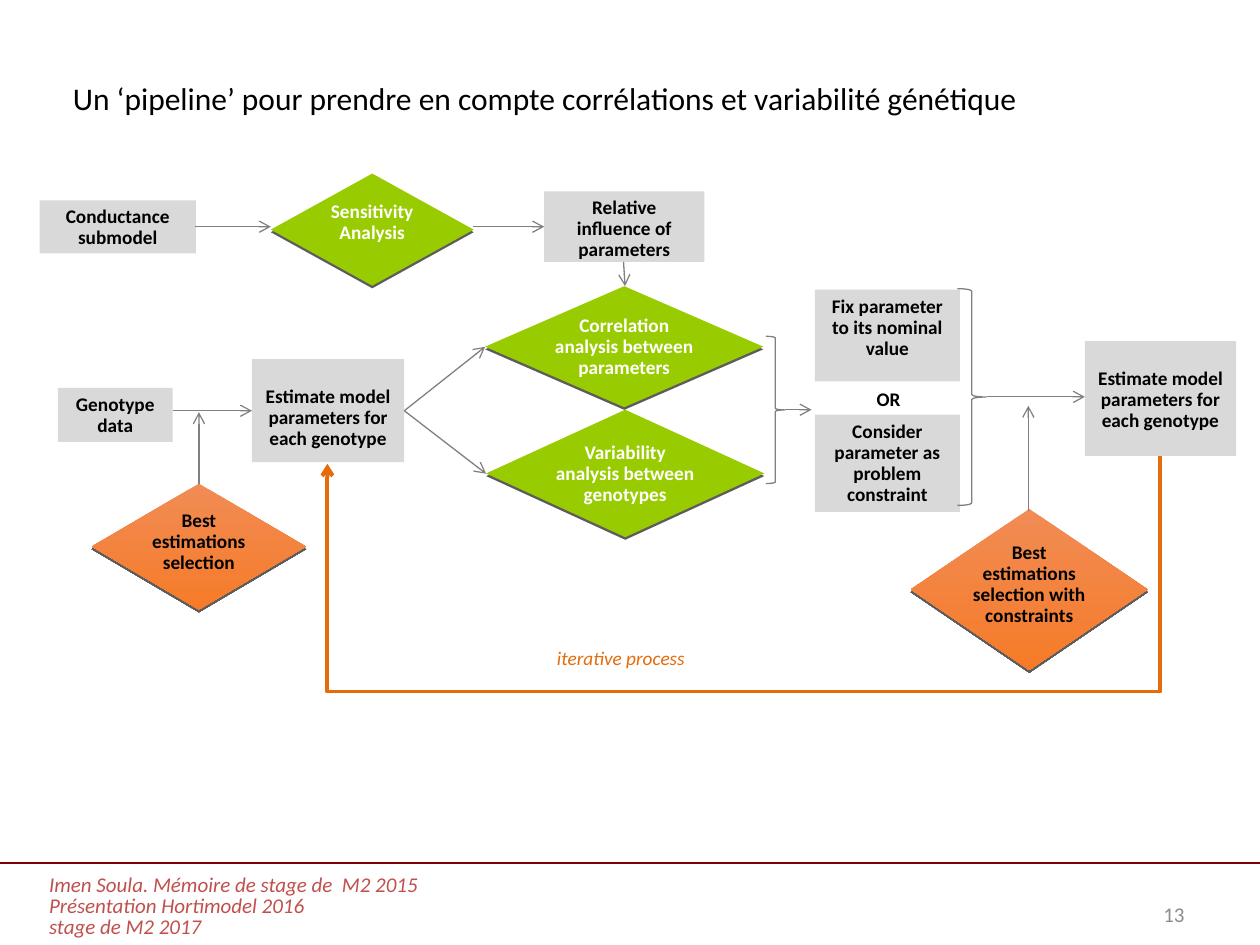
from dataclasses import dataclass

from lxml import etree
from pptx import Presentation
from pptx.dml.color import RGBColor
from pptx.enum.shapes import MSO_CONNECTOR, MSO_SHAPE
from pptx.enum.text import MSO_ANCHOR, PP_ALIGN
from pptx.oxml.ns import qn
from pptx.util import Cm, Pt

RECT = MSO_SHAPE.RECTANGLE
DECISION = MSO_SHAPE.FLOWCHART_DECISION
BRACE = MSO_SHAPE.RIGHT_BRACE
STRAIGHT, ELBOW = MSO_CONNECTOR.STRAIGHT, MSO_CONNECTOR.ELBOW
LEFT, CENTER, RIGHT = PP_ALIGN.LEFT, PP_ALIGN.CENTER, PP_ALIGN.RIGHT
TOP, MIDDLE = MSO_ANCHOR.TOP, MSO_ANCHOR.MIDDLE


@dataclass(frozen=True)
class Theme:
    font: str = "Calibri"
    black: str = "000000"
    white: str = "FFFFFF"
    box: str = "D9D9D9"
    green: str = "99CC00"
    orange: tuple = ("F18C55", "F67B28")
    line: str = "808080"
    loop: str = "E46C0A"
    rule: str = "800000"
    credit: str = "C0504D"
    number: str = "8C8C8C"
    title_size: int = 18
    footer_size: int = 12
    label_size: int = 11
    leading: int = 12


T = Theme()


def rgb(value):
    return RGBColor.from_string(value)


def write(sp, text, size=T.label_size, color=T.black, bold=False, italic=False,
          align=CENTER, anchor=TOP, wrap=True, leading=T.leading,
          margins=(0.25, 0.13, 0.25, 0.13), indent=0):
    """Write one paragraph per line; margins (l, t, r, b) and indent in cm."""
    tf = sp.text_frame
    tf.word_wrap = wrap
    tf.vertical_anchor = anchor
    tf.margin_left, tf.margin_top, tf.margin_right, tf.margin_bottom = map(Cm, margins)
    for i, line in enumerate(text.split("\n")):
        p = tf.add_paragraph() if i else tf.paragraphs[0]
        p.alignment = align
        if leading:
            p.line_spacing = Pt(leading)
        if indent:
            p._p.get_or_add_pPr().set("marL", str(Cm(indent)))
        r = p.add_run()
        r.text = line
        f = r.font
        f.name, f.size, f.bold, f.italic = T.font, Pt(size), bold, italic
        f.color.rgb = rgb(color)


def add_text(slide, x, y, w, h, text, **fmt):
    write(slide.shapes.add_textbox(Cm(x), Cm(y), Cm(w), Cm(h)), text, **fmt)


def add_node(slide, kind, x, y, w, h, fill=None):
    sp = slide.shapes.add_shape(kind, Cm(x), Cm(y), Cm(w), Cm(h))
    sp.shadow.inherit = False
    if fill is None:
        sp.fill.background()
        sp.line.color.rgb = rgb(T.line)
        sp.line.width = Pt(0.75)
        return sp
    sp.line.fill.background()
    if isinstance(fill, tuple):
        sp.fill.gradient()
        sp.fill.gradient_angle = 270
        for stop, color, pos in zip(sp.fill.gradient_stops, fill, (0, 1)):
            stop.color.rgb = rgb(color)
            stop.position = pos
    else:
        sp.fill.solid()
        sp.fill.fore_color.rgb = rgb(fill)
    return sp


def drop_shadow(sp):
    effects = sp._element.spPr.find(qn("a:effectLst"))
    shadow = etree.SubElement(effects, qn("a:outerShdw"), blurRad="0",
                              dist=str(Pt(1.5)), dir="5400000", rotWithShape="0")
    color = etree.SubElement(shadow, qn("a:srgbClr"), val=T.black)
    etree.SubElement(color, qn("a:alpha"), val="63000")


def add_line(slide, x1, y1, x2, y2, kind=STRAIGHT, color=T.line, width=0.75, arrow=True):
    c = slide.shapes.add_connector(kind, Cm(x1), Cm(y1), Cm(x2), Cm(y2))
    c.line.color.rgb = rgb(color)
    c.line.width = Pt(width)
    if arrow:
        etree.SubElement(c.line._get_or_add_ln(), qn("a:tailEnd"), type="arrow")
    etree.SubElement(c._element.spPr, qn("a:effectLst"))
    return c


def add_loop(slide, x1, y1, x2, y2, low):
    """Elbow that leaves (x1, y1) downwards, runs at low and rises to (x2, y2)."""
    across, down = x1 - x2, y2 - y1
    left = (x1 + x2 - down) / 2
    top = (y1 + y2 - across) / 2
    c = add_line(slide, left, top, left + down, top + across, ELBOW, T.loop, 2.25)
    spPr = c._element.spPr
    spPr.find(qn("a:xfrm")).set("rot", "5400000")
    guides = spPr.find(qn("a:prstGeom")).get_or_add_avLst()
    ratio = round((low - y1) / down * 100000)
    etree.SubElement(guides, qn("a:gd"), name="adj1", fmla=f"val {ratio}")


def build_title(slide, x, y, w, h):
    add_text(slide, x, y, w, h,
             "Un ‘pipeline’ pour prendre en compte corrélations et variabilité génétique",
             size=T.title_size, align=LEFT, wrap=False, leading=None)


def build_pipeline(slide, x, y):
    # Data and result boxes: position, size, text, top margin
    estimate = "Estimate model parameters for each genotype"
    for dx, dy, w, h, text, top in (
        (0, 0.54, 3.15, 1.07, "Conductance submodel", 0.13),
        (10.17, 0.36, 3.23, 1.42, "Relative influence of parameters", 0.13),
        (0.37, 4.32, 2.31, 1.09, "Genotype data", 0.13),
        (4.28, 3.74, 3.07, 2.08, estimate, 0.55),
        (15.63, 2.34, 2.92, 1.85, "Fix parameter to its nominal value", 0.13),
        (15.63, 4.86, 2.92, 1.96, "Consider parameter as problem constraint", 0.13),
        (21.07, 3.38, 3.05, 2.31, estimate, 0.55),
    ):
        sp = add_node(slide, RECT, x + dx, y + dy, w, h, T.box)
        write(sp, text, bold=True, margins=(0.25, top, 0.25, 0.13))

    # Analysis and selection diamonds
    green = (T.green, T.white, 0)
    orange = (T.orange, T.black, 0.2)
    for dx, dy, w, h, text, (fill, color, bottom), anchor in (
        (4.66, 0, 4.09, 2.26, "Sensitivity Analysis", green, TOP),
        (9, 4.76, 5.61, 2.57, "Variability analysis between genotypes", green, MIDDLE),
        (8.98, 2.27, 5.61, 2.44, "Correlation analysis between parameters", green, MIDDLE),
        (1.05, 6.25, 4.32, 2.54, "Best estimations selection", orange, MIDDLE),
        (17.56, 6.76, 4.78, 3.25, "Best estimations selection with constraints", orange, MIDDLE),
    ):
        sp = add_node(slide, DECISION, x + dx, y + dy, w, h, fill)
        drop_shadow(sp)
        write(sp, text, color=color, bold=True, anchor=anchor, margins=(0, 0, 0, bottom))

    # Braces
    for dx, dy, w, h in ((14.64, 3.28, 0.38, 2.97), (18.5, 2.32, 0.58, 4.37)):
        add_node(slide, BRACE, x + dx, y + dy, w, h)

    # Arrows
    for x1, y1, x2, y2 in (
        (3.14, 1.07, 4.66, 1.07), (8.73, 1.07, 10.17, 1.07), (11.77, 1.78, 11.8, 2.27),
        (2.68, 4.78, 4.28, 4.78), (3.21, 6.25, 3.21, 4.81),
        (7.35, 4.78, 8.98, 3.49), (7.35, 4.78, 9, 6.05),
        (15.02, 4.76, 15.56, 4.76), (19.09, 4.5, 21.07, 4.5), (19.93, 6.81, 19.93, 4.68),
    ):
        add_line(slide, x + x1, y + y1, x + x2, y + y2)

    # Iteration loop and free labels
    add_loop(slide, x + 22.59, y + 5.69, x + 5.8, y + 5.85, y + 10.44)
    add_text(slide, x + 16.62, y + 4.22, 0.99, 0.69, "OR", bold=True, wrap=False)
    add_text(slide, x + 10.17, y + 9.45, 3.1, 0.69, "iterative process",
             color=T.loop, italic=True, wrap=False)


def build_footer(slide, x, y, w):
    add_line(slide, x, y, x + w, y, color=T.rule, arrow=False)
    add_text(slide, x, y + 0.13, w, 1.55,
             "Imen Soula. Mémoire de stage de  M2 2015\n"
             "Présentation Hortimodel 2016\nstage de M2 2017",
             size=T.footer_size, color=T.credit, italic=True, align=LEFT, indent=0.74)
    add_text(slide, x + w - 7.19, y + 0.51, 5.92, 1.02, "13", size=T.footer_size,
             color=T.number, align=RIGHT, anchor=MIDDLE, leading=None)


def main():
    prs = Presentation()
    prs.slide_width, prs.slide_height = Cm(25.4), Cm(19.05)
    slide = prs.slides.add_slide(prs.slide_layouts[6])
    build_footer(slide, 0, 17.4, 25.4)
    build_pipeline(slide, 0.8, 3.5)
    build_title(slide, 1.22, 1.47, 19.79, 1.02)
    prs.save("out.pptx")


if __name__ == "__main__":
    main()
